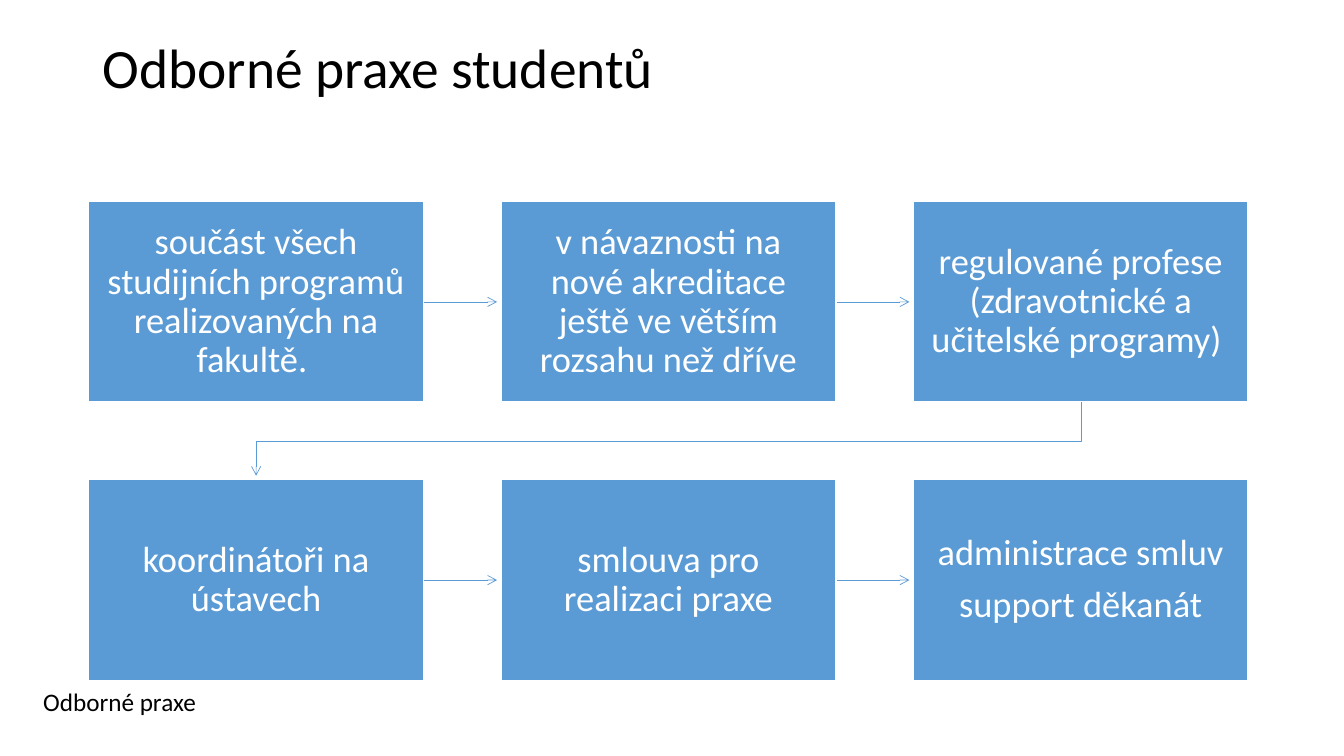
from lxml.etree import SubElement
from pptx import Presentation
from pptx.dml.color import RGBColor as Rgb
from pptx.enum.shapes import MSO_CONNECTOR as Conn, MSO_SHAPE as Shape
from pptx.enum.text import MSO_ANCHOR as Anchor, PP_ALIGN as Align
from pptx.oxml.ns import qn
from pptx.util import Inches, Pt

BLUE, WHITE, BLACK = "5B9BD5", "FFFFFF", "000000"
WIDE, HIGH = 3.32, 1.99
STEP_X, STEP_Y = 4.09, 2.76
GAP = 0.04
STEPS = [
    ["součást všech studijních programů realizovaných na fakultě. "],
    ["v návaznosti na nové akreditace ještě ve větším rozsahu než dříve"],
    ["regulované profese (zdravotnické a učitelské programy) "],
    ["koordinátoři na ústavech"],
    ["smlouva pro realizaci praxe"],
    ["administrace smluv", "support děkanát"],
]


def color(code):
    return Rgb.from_string(code)


def write(frame, lines, size, code, align=Align.LEFT, space=1.0, after=0):
    for i, line in enumerate(lines):
        para = frame.paragraphs[0] if i == 0 else frame.add_paragraph()
        para.text = line
        para.alignment = align
        para.line_spacing = space
        para.space_after = Pt(after)
        para.font.size = Pt(size)
        para.font.name = "Calibri"
        para.font.color.rgb = color(code)


def label(slide, box, text, size, space=1.0, wrap=True, anchor=Anchor.TOP):
    frame = slide.shapes.add_textbox(*map(Inches, box)).text_frame
    frame.word_wrap = wrap
    frame.vertical_anchor = anchor
    write(frame, [text], size, BLACK, space=space)


def point(line):
    line.line.color.rgb = color(BLUE)
    line.line.width = Pt(0.5)
    SubElement(line.line._get_or_add_ln(), qn("a:tailEnd"), type="arrow")


def arrow(slide, left, right, y):
    line = slide.shapes.add_connector(Conn.STRAIGHT, *map(Inches, (left, y, right, y)))
    point(line)
    SubElement(line._element.spPr, qn("a:effectLst"))


def bend(slide, start, end, mid):
    route = [start, (start[0], mid), (end[0], mid), end]
    spots = [(Inches(x), Inches(y)) for x, y in route]
    pen = slide.shapes.build_freeform(*spots[0])
    pen.add_line_segments(spots[1:], close=False)
    line = pen.convert_to_shape()
    line.fill.background()
    line.shadow.inherit = False
    point(line)


def card(slide, left, top, lines):
    rect = slide.shapes.add_shape(Shape.RECTANGLE, *map(Inches, (left, top, WIDE, HIGH)))
    rect.shadow.inherit = False
    rect.fill.solid()
    rect.fill.fore_color.rgb = color(BLUE)
    rect.line.color.rgb = color(WHITE)
    rect.line.width = Pt(1)
    frame = rect.text_frame
    frame.word_wrap = True
    frame.vertical_anchor = Anchor.MIDDLE
    frame.margin_left = frame.margin_right = Inches(0.16)
    frame.margin_top = frame.margin_bottom = Inches(0.17)
    write(frame, lines, 26, WHITE, Align.CENTER, 0.9, 9)


def flow(slide, left, top):
    for i, lines in enumerate(STEPS):
        row, col = divmod(i, 3)
        x, y = left + col * STEP_X, top + row * STEP_Y
        if col < 2:
            arrow(slide, x + WIDE, x + STEP_X - GAP, y + HIGH / 2)
        card(slide, x, y, lines)
    mid = left + WIDE / 2
    low = top + HIGH
    bend(slide, (mid + 2 * STEP_X, low), (mid, top + STEP_Y - GAP),
         (low + top + STEP_Y) / 2)


def main():
    deck = Presentation()
    deck.slide_width, deck.slide_height = Inches(13.33), Inches(7.5)
    slide = deck.slides.add_slide(deck.slide_layouts[6])
    label(slide, (0.92, 0.3, 11.5, 0.79), "Odborné praxe studentů", 39.6, 0.9,
          anchor=Anchor.MIDDLE)
    flow(slide, 0.88, 2)
    label(slide, (0.33, 6.76, 1.74, 0.4), "Odborné praxe", 18, wrap=False)
    deck.save("out.pptx")


if __name__ == "__main__":
    main()
